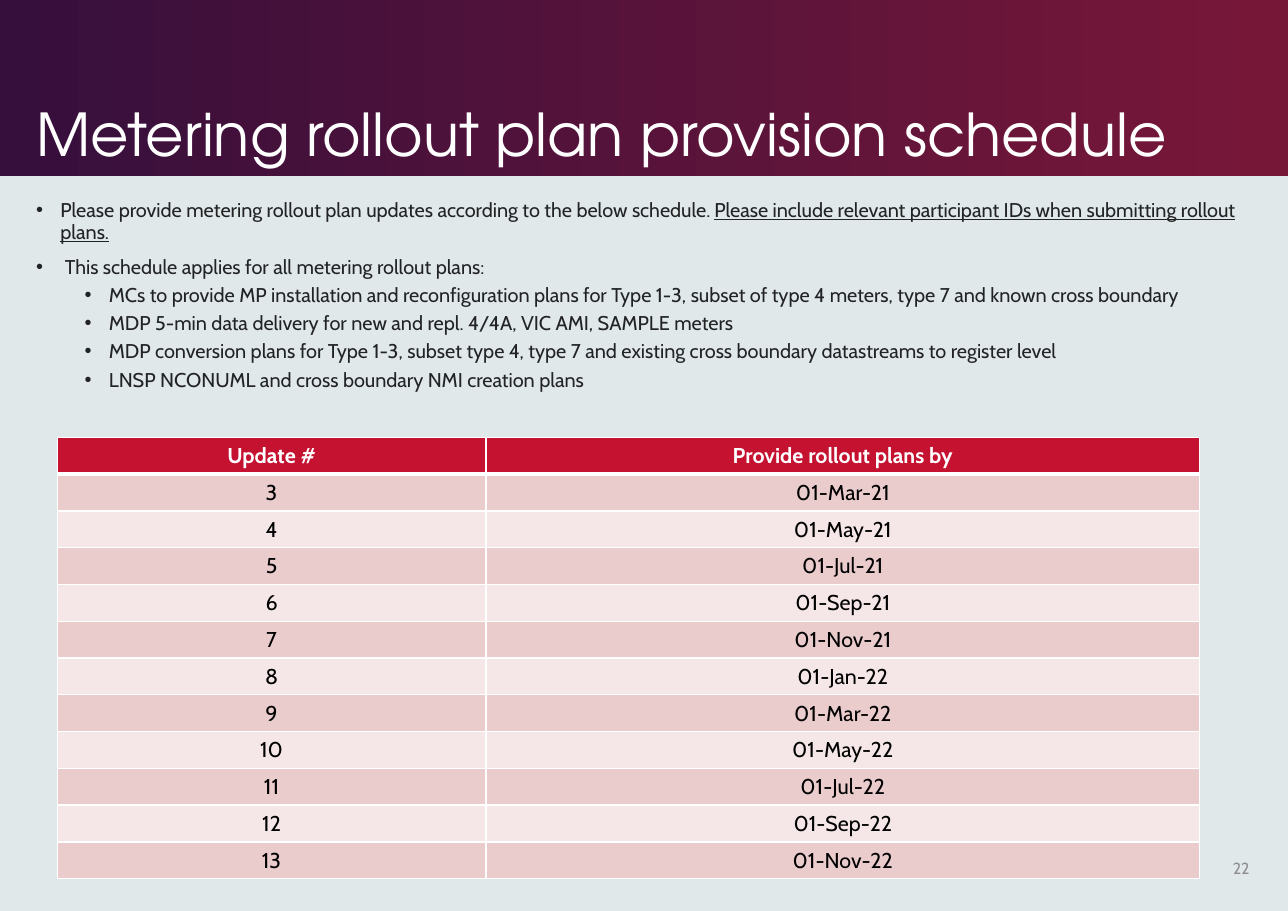
from dataclasses import dataclass

from lxml.etree import SubElement
from pptx import Presentation
from pptx.dml.color import RGBColor
from pptx.enum.shapes import MSO_SHAPE
from pptx.enum.text import MSO_ANCHOR, PP_ALIGN
from pptx.oxml.ns import qn
from pptx.util import Inches, Pt

TITLE = "Metering rollout plan provision schedule"
PAGE = "22"
# (level, [(text, underlined), ...])
POINTS = [
    (0, [("Please provide metering rollout plan updates according to the below schedule. ", False),
         ("Please include relevant participant IDs when submitting rollout plans.", True)]),
    (0, [(" This schedule applies for all metering rollout plans:", False)]),
    (1, [("MCs to provide MP installation and reconfiguration plans for Type 1-3, "
          "subset of type 4 meters, type 7 and known cross boundary", False)]),
    (1, [("MDP 5-min data delivery for new and repl. 4/4A, VIC AMI, SAMPLE meters", False)]),
    (1, [("MDP conversion plans for Type 1-3, subset type 4, type 7 and existing "
          "cross boundary datastreams to register level", False)]),
    (1, [("LNSP NCONUML and cross boundary NMI creation plans", False)]),
]
HEAD = ("Update #", "Provide rollout plans by")
FIRST = 3
DATES = ["01-Mar-21", "01-May-21", "01-Jul-21", "01-Sep-21", "01-Nov-21", "01-Jan-22",
         "01-Mar-22", "01-May-22", "01-Jul-22", "01-Sep-22", "01-Nov-22"]


@dataclass(frozen=True)
class Theme:
    head_font: str = "TeX Gyre Adventor"
    font: str = "Cabin"
    title: float = 38.6
    body: float = 13
    cell: float = 14
    page: float = 10.5
    back: str = "E0E8EA"
    dark: str = "360F3C"
    wine: str = "771738"
    white: str = "FFFFFF"
    black: str = "000000"
    ink: str = "222324"
    gray: str = "8D8D8E"
    red: str = "C41230"
    bands: tuple = ("EACCCD", "F5E7E8")


THEME = Theme()
WIDTH, HEIGHT = 11.69, 8.27


def color(code):
    return RGBColor.from_string(code)


def add_run(para, text, size, tone, face=THEME.font, bold=False, line=False):
    run = para.add_run()
    run.text = text
    font = run.font
    font.name, font.size, font.bold, font.underline = face, Pt(size), bold, line
    font.color.rgb = color(tone)


def add_box(slide, left, top, width, height, anchor):
    box = slide.shapes.add_textbox(*map(Inches, (left, top, width, height)))
    frame = box.text_frame
    frame.word_wrap = True
    frame.vertical_anchor = anchor
    return frame


def add_bullet(para, level):
    props = para._p.get_or_add_pPr()
    props.set("marL", str(Inches((0.22, 0.66)[level])))
    props.set("indent", str(Inches(-0.22)))
    SubElement(props, qn("a:buFont"), typeface="Arial")
    SubElement(props, qn("a:buChar"), char="•")


def add_edges(cell, widths):
    """Draw white borders; widths are points for left, right, top, bottom."""
    props = cell._tc.get_or_add_tcPr()
    for side, width in zip("LRTB", widths):
        edge = SubElement(props, qn(f"a:ln{side}"), w=str(Pt(width)))
        fill = SubElement(edge, qn("a:solidFill"))
        SubElement(fill, qn("a:srgbClr"), val=THEME.white)


def add_banner(slide):
    band = slide.shapes.add_shape(MSO_SHAPE.RECTANGLE, 0, 0, Inches(WIDTH), Inches(1.6))
    band.shadow.inherit = False
    band.line.fill.background()
    band.fill.gradient()
    band.fill.gradient_angle = 0
    for stop, tone, place in zip(band.fill.gradient_stops, (THEME.dark, THEME.wine), (0, 0.99)):
        stop.color.rgb = color(tone)
        stop.position = place
    para = add_box(slide, 0.23, 0.16, 11.46, 1.43, MSO_ANCHOR.BOTTOM).paragraphs[0]
    para.line_spacing = 0.9
    add_run(para, TITLE, THEME.title, THEME.white, THEME.head_font)


def add_points(slide):
    frame = add_box(slide, 0.23, 1.77, 11.22, 1.71, MSO_ANCHOR.TOP)
    for i, (level, parts) in enumerate(POINTS):
        para = frame.add_paragraph() if i else frame.paragraphs[0]
        para.level = level
        add_bullet(para, level)
        para.line_spacing = 0.9
        para.space_before = Pt((8.8, 4.4)[level] if i else 0)
        for text, line in parts:
            add_run(para, text, THEME.body, THEME.ink, line=line)


def add_plan(slide):
    rows = [HEAD] + [(str(n), date) for n, date in enumerate(DATES, FIRST)]
    high = Inches(4)
    table = slide.shapes.add_table(len(rows), len(HEAD), Inches(0.52), Inches(3.97),
                                   Inches(10.37), high).table
    for col, width in zip(table.columns, (3.89, 6.48)):
        col.width = Inches(width)
    for r, row in enumerate(rows):
        table.rows[r].height = high // len(rows)
        top = r == 0
        for c, text in enumerate(row):
            cell = table.cell(r, c)
            add_edges(cell, (1, 1, 3 if r == 1 else 1, 3 if top else 1))
            cell.fill.solid()
            cell.fill.fore_color.rgb = color(THEME.red if top else THEME.bands[(r - 1) % 2])
            cell.margin_left = cell.margin_right = Inches(0.05)
            cell.margin_top = cell.margin_bottom = Inches(0.05)
            cell.vertical_anchor = MSO_ANCHOR.MIDDLE
            para = cell.text_frame.paragraphs[0]
            para.alignment = PP_ALIGN.CENTER
            add_run(para, text, THEME.cell, THEME.white if top else THEME.black, bold=top)


def add_page(slide):
    para = add_box(slide, 10.89, 7.66, 0.55, 0.44, MSO_ANCHOR.MIDDLE).paragraphs[0]
    para.alignment = PP_ALIGN.RIGHT
    add_run(para, PAGE, THEME.page, THEME.gray)


def main():
    deck = Presentation()
    deck.slide_width, deck.slide_height = Inches(WIDTH), Inches(HEIGHT)
    slide = deck.slides.add_slide(deck.slide_layouts[6])
    slide.background.fill.solid()
    slide.background.fill.fore_color.rgb = color(THEME.back)
    add_banner(slide)
    add_page(slide)
    add_plan(slide)
    add_points(slide)
    deck.save("out.pptx")


if __name__ == "__main__":
    main()
